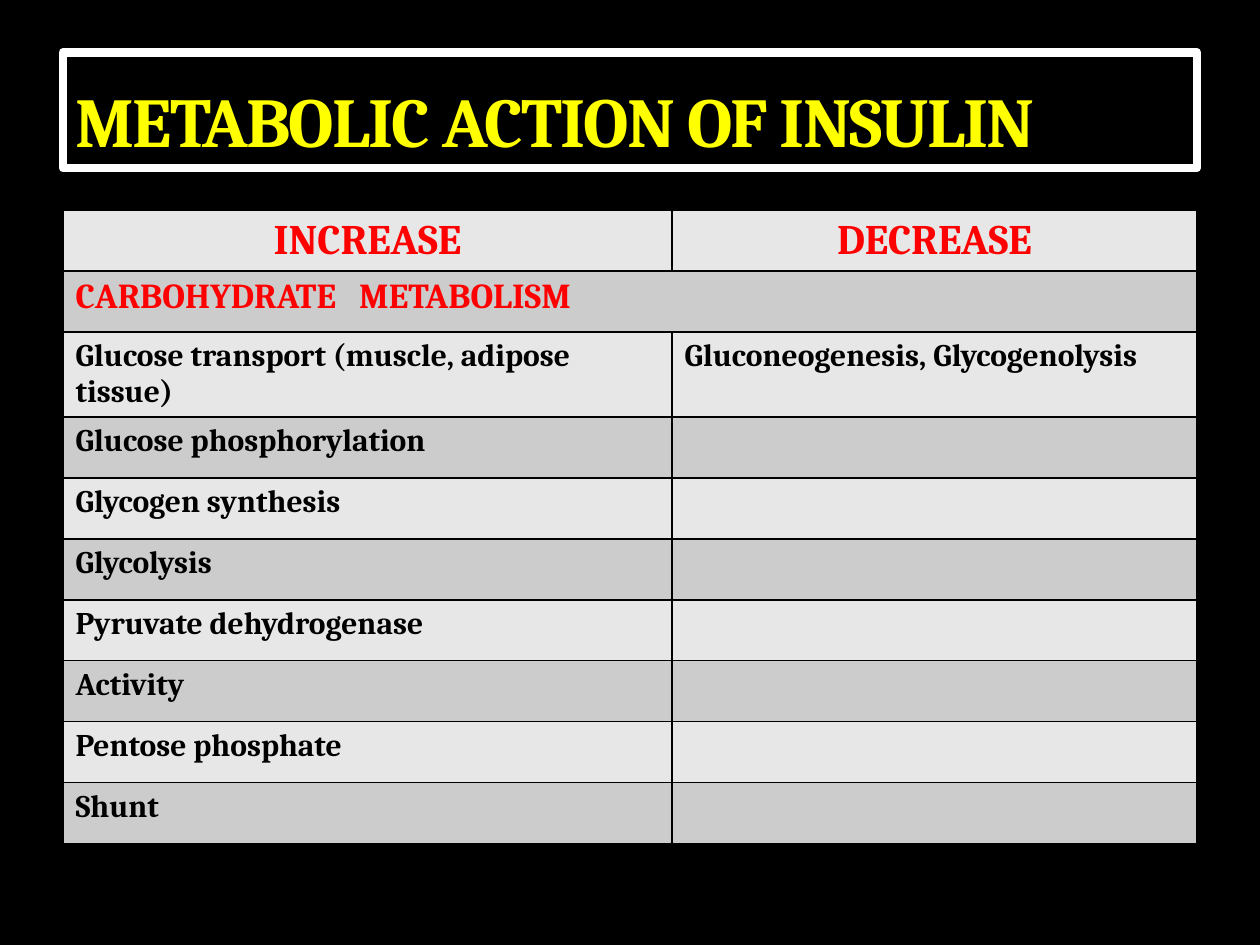
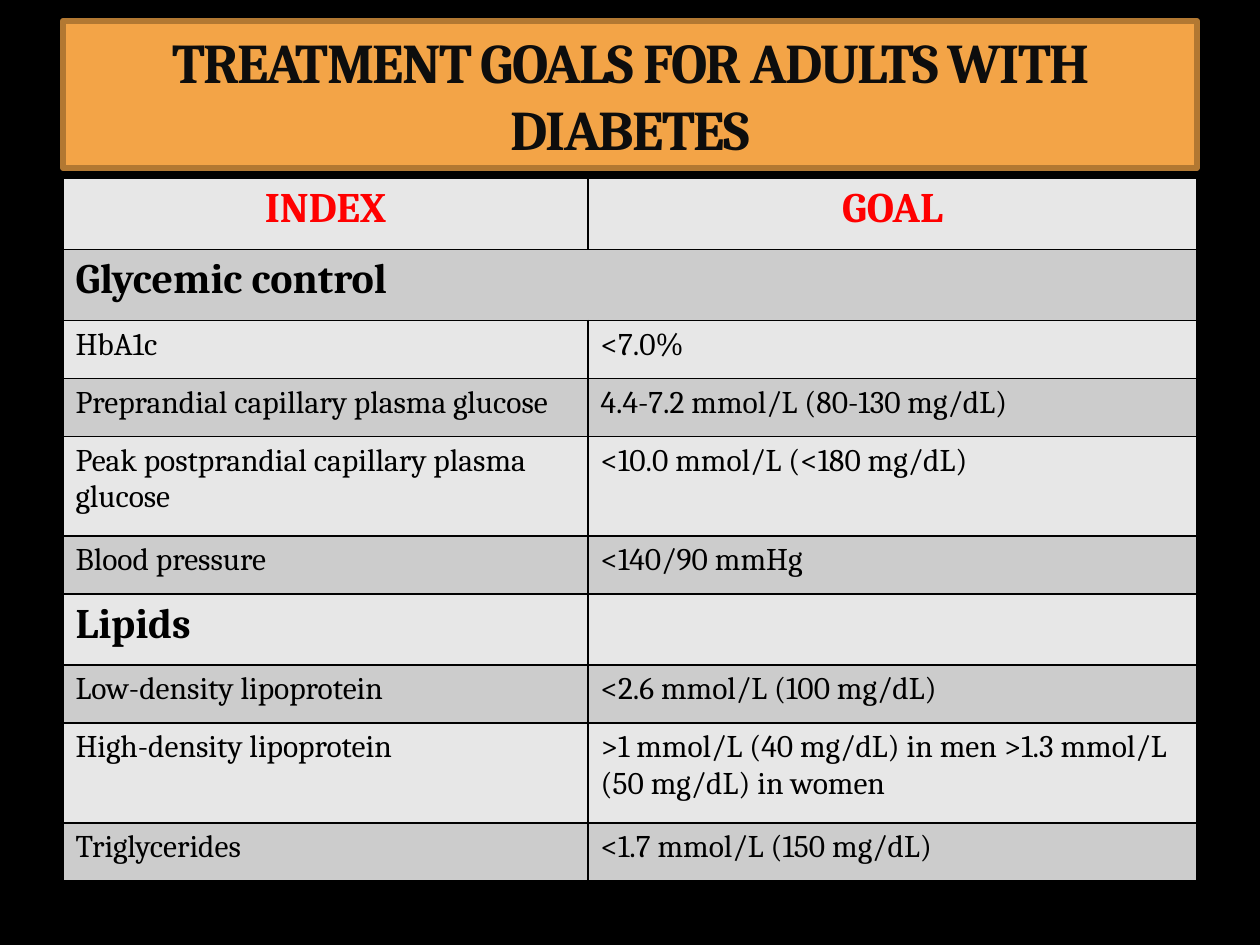
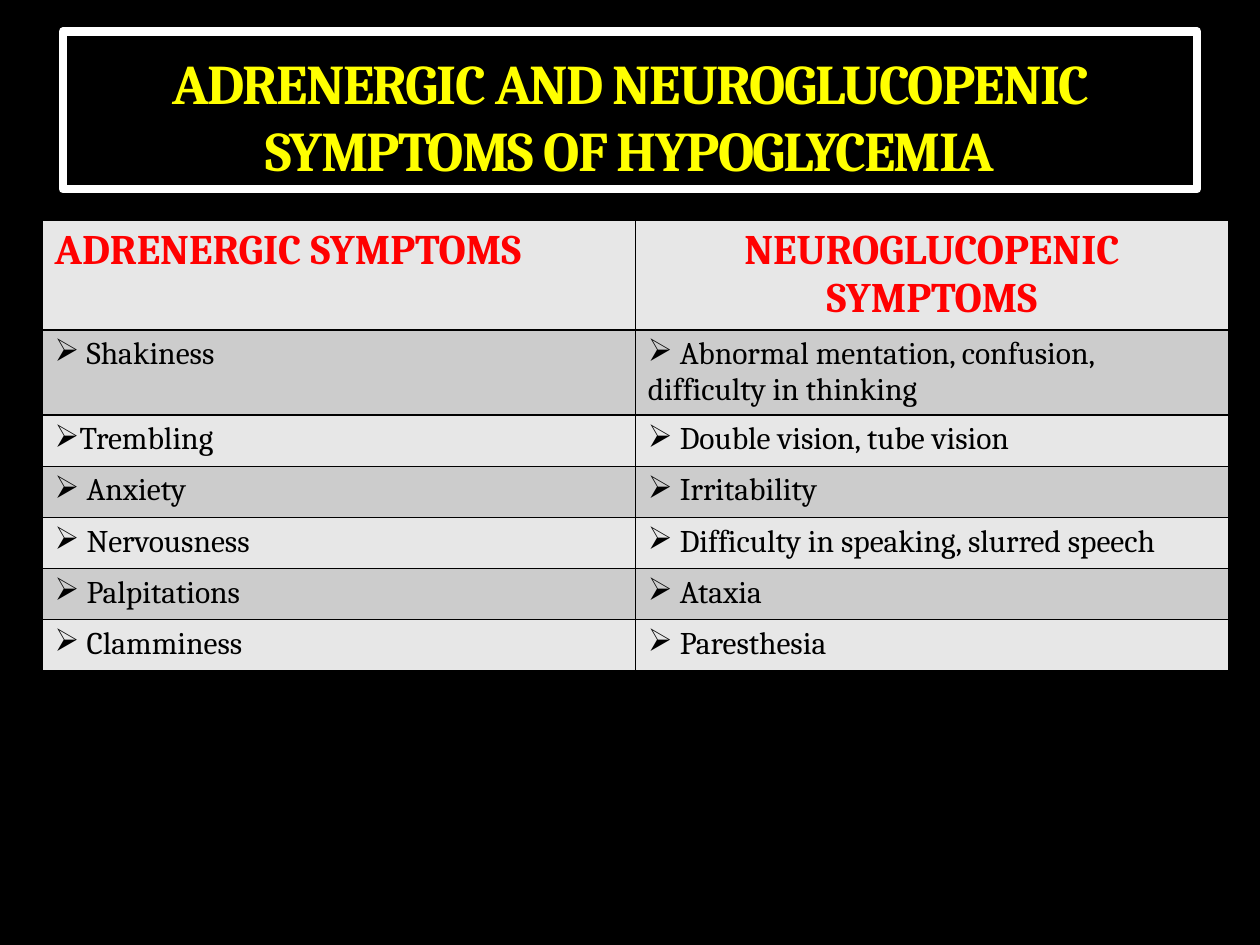
"""Build three slides of tables on insulin, diabetes goals and hypoglycemia."""
import dataclasses
import itertools

import lxml.etree
import pptx
import pptx.dml.color
import pptx.enum.shapes
import pptx.enum.text
import pptx.oxml.ns
import pptx.util

Pt = pptx.util.Pt
Align = pptx.enum.text.PP_ALIGN
qn = pptx.oxml.ns.qn


@dataclasses.dataclass(frozen=True)
class Theme:
    """Hold the shared colours, font and type sizes."""
    font: str = "Cambria"
    black: str = "000000"
    white: str = "FFFFFF"
    red: str = "FF0000"
    yellow: str = "FFFF00"
    ink: str = "0D0D0D"
    orange: str = "F3A447"
    brown: str = "B27832"
    edge: str = "3C4422"
    bands: tuple[str, str] = ("E7E7E7", "CCCCCC")
    large: int = 40
    title: int = 32
    head: int = 24
    group: int = 20
    body: int = 18


THEME = Theme()


@dataclasses.dataclass(frozen=True)
class Style:
    """Describe how text looks."""
    size: int
    color: str
    bold: bool = True


HEAD = Style(THEME.head, THEME.red)
GROUP = Style(THEME.group, THEME.red)
TOPIC = Style(THEME.head, THEME.black)
STRONG = Style(THEME.body, THEME.black)
PLAIN = Style(THEME.body, THEME.black, False)


@dataclasses.dataclass(frozen=True)
class Banner:
    """Describe the framed title of a slide."""
    text: str
    top: float
    height: float
    style: Style
    fill: str = THEME.black
    line: str = THEME.white
    weight: float = 5
    align: Align = Align.CENTER
    shade: bool = True


@dataclasses.dataclass(frozen=True)
class Row:
    """Describe a table row; a single text spans the row."""
    texts: tuple[str, ...]
    height: float
    style: Style
    aligns: tuple[Align, ...] = (Align.LEFT, Align.LEFT)
    bullet: str = ""


@dataclasses.dataclass(frozen=True)
class Grid:
    """Describe a table."""
    left: float
    top: float
    widths: tuple[float, float]
    rows: tuple[Row, ...]


def color(code: str) -> pptx.dml.color.RGBColor:
    """Turn a hex code into a colour."""
    return pptx.dml.color.RGBColor.from_string(code)


def add_fill(node: lxml.etree._Element, code: str, alpha: int = 100) -> None:
    """Add a solid fill to an XML node."""
    solid = lxml.etree.SubElement(node, qn("a:solidFill"))
    add_rgb(solid, code, alpha)


def add_rgb(node: lxml.etree._Element, code: str, alpha: int) -> None:
    """Add a colour of given opacity to an XML node."""
    rgb = lxml.etree.SubElement(node, qn("a:srgbClr"), val=code)
    if alpha < 100:
        lxml.etree.SubElement(rgb, qn("a:alpha"), val=str(alpha * 1000))


def set_text(frame: pptx.text.text.TextFrame, text: str, style: Style, align: Align) -> None:
    """Write one styled paragraph."""
    frame.text = text
    part = frame.paragraphs[0]
    part.alignment = align
    for run in part.runs:
        font = run.font
        font.name, font.size, font.bold = THEME.font, Pt(style.size), style.bold
        font.color.rgb = color(style.color)


def add_shade(shape: pptx.shapes.autoshape.Shape) -> None:
    """Add a soft dark shadow around a shape."""
    effects = shape._element.spPr.find(qn("a:effectLst"))
    outer = lxml.etree.SubElement(effects, qn("a:outerShdw"), blurRad=str(Pt(7.5)))
    add_rgb(outer, THEME.black, 50)


def draw_banner(slide: pptx.slide.Slide, banner: Banner) -> None:
    """Draw the framed title."""
    box = slide.shapes.add_shape(
        pptx.enum.shapes.MSO_SHAPE.RECTANGLE,
        Pt(36), Pt(banner.top), Pt(648), Pt(banner.height))
    box.shadow.inherit = False
    box.fill.solid()
    box.fill.fore_color.rgb = color(banner.fill)
    box.line.color.rgb = color(banner.line)
    box.line.width = Pt(banner.weight)
    if banner.shade:
        add_shade(box)
    frame = box.text_frame
    frame.word_wrap = True
    frame.vertical_anchor = pptx.enum.text.MSO_ANCHOR.BOTTOM
    set_text(frame, banner.text, banner.style, banner.align)
    for run in frame.paragraphs[0].runs:
        props = run._r.get_or_add_rPr()
        props.set("spc", "-100")
        line = lxml.etree.Element(qn("a:ln"), w=str(Pt(0.25)))
        add_fill(line, THEME.edge, 25)
        props.insert(0, line)


def style_cell(cell: pptx.table._Cell, band: str) -> None:
    """Give a cell its black borders and band colour."""
    props = cell._tc.get_or_add_tcPr()
    for side in "LRTB":
        add_fill(lxml.etree.SubElement(props, qn(f"a:ln{side}"), w=str(Pt(1))), THEME.black)
    cell.fill.solid()
    cell.fill.fore_color.rgb = color(band)


def draw_grid(slide: pptx.slide.Slide, grid: Grid) -> None:
    """Draw a banded table."""
    table = slide.shapes.add_table(
        len(grid.rows), len(grid.widths), Pt(grid.left), Pt(grid.top),
        Pt(sum(grid.widths)), Pt(sum(row.height for row in grid.rows))).table
    for column, width in zip(table.columns, grid.widths):
        column.width = Pt(width)
    for line, row, band in zip(table.rows, grid.rows, itertools.cycle(THEME.bands)):
        line.height = Pt(row.height)
        for cell in line.cells:
            style_cell(cell, band)
        if len(row.texts) == 1:
            line.cells[0].merge(line.cells[1])
        for cell, text, align in zip(line.cells, row.texts, row.aligns):
            if not text:
                continue
            set_text(cell.text_frame, text, row.style, align)
            if row.bullet:
                props = cell.text_frame.paragraphs[0]._p.get_or_add_pPr()
                lxml.etree.SubElement(props, qn("a:buChar"), char=row.bullet)


CENTER = (Align.CENTER, Align.CENTER)
ACTION = 34.8
TOPIC_H, GOAL, TALL = 40.6, 33.1, 57.1
SIGN = 29.2

ACTIONS = (
    ("Glucose transport (muscle, adipose tissue)", "Gluconeogenesis, Glycogenolysis"),
    ("Glucose phosphorylation", ""),
    ("Glycogen synthesis", ""),
    ("Glycolysis", ""),
    ("Pyruvate dehydrogenase", ""),
    ("Activity", ""),
    ("Pentose phosphate", ""),
    ("Shunt", ""),
)
SIGNS = (
    (" Shakiness", " Abnormal mentation, confusion, difficulty in thinking"),
    ("Trembling", " Double vision, tube vision"),
    (" Anxiety", " Irritability"),
    (" Nervousness", " Difficulty in speaking, slurred speech"),
    (" Palpitations", " Ataxia"),
    (" Clamminess", " Paresthesia"),
)

SLIDES = (
    (
        Grid(36, 120, (348, 300), (
            Row(("INCREASE", "DECREASE"), ACTION, HEAD, CENTER),
            Row(("CARBOHYDRATE   METABOLISM",), ACTION, GROUP),
            *(Row(pair, ACTION, STRONG) for pair in ACTIONS),
        )),
        Banner("METABOLIC ACTION OF INSULIN", 30, 66,
               Style(THEME.large, THEME.yellow), align=Align.LEFT),
    ),
    (
        Grid(36, 102, (300, 348), (
            Row(("INDEX", "GOAL"), TOPIC_H, HEAD, CENTER),
            Row(("Glycemic control",), TOPIC_H, TOPIC),
            Row(("HbA1c", "<7.0%"), GOAL, PLAIN),
            Row(("Preprandial capillary plasma glucose",
                 "4.4-7.2 mmol/L (80-130 mg/dL)"), GOAL, PLAIN),
            Row(("Peak postprandial capillary plasma glucose",
                 "<10.0 mmol/L (<180 mg/dL)"), TALL, PLAIN),
            Row(("Blood pressure", "<140/90 mmHg"), GOAL, PLAIN),
            Row(("Lipids", ""), TOPIC_H, TOPIC),
            Row(("Low-density lipoprotein", "<2.6 mmol/L (100 mg/dL)"), GOAL, PLAIN),
            Row(("High-density lipoprotein",
                 ">1 mmol/L (40 mg/dL) in men >1.3 mmol/L (50 mg/dL) in women"), TALL, PLAIN),
            Row(("Triglycerides", "<1.7 mmol/L (150 mg/dL)"), GOAL, PLAIN),
        )),
        Banner("TREATMENT GOALS FOR ADULTS WITH DIABETES", 12, 84,
               Style(THEME.title, THEME.ink), THEME.orange, THEME.brown, 3.5, shade=False),
    ),
    (
        Grid(24, 126, (339, 339), (
            Row(("ADRENERGIC SYMPTOMS", "NEUROGLUCOPENIC SYMPTOMS"), SIGN, HEAD,
                (Align.LEFT, Align.CENTER)),
            *(Row(pair, SIGN, PLAIN, bullet="➢") for pair in SIGNS),
        )),
        Banner("ADRENERGIC AND NEUROGLUCOPENIC SYMPTOMS OF HYPOGLYCEMIA", 18, 90,
               Style(THEME.title, THEME.yellow)),
    ),
)


def main() -> None:
    """Build and save the deck."""
    deck = pptx.Presentation()
    deck.slide_width, deck.slide_height = Pt(720), Pt(540)
    for grid, banner in SLIDES:
        slide = deck.slides.add_slide(deck.slide_layouts[6])
        slide.background.fill.solid()
        slide.background.fill.fore_color.rgb = color(THEME.black)
        draw_grid(slide, grid)
        draw_banner(slide, banner)
    deck.save("out.pptx")


if __name__ == "__main__":
    main()
